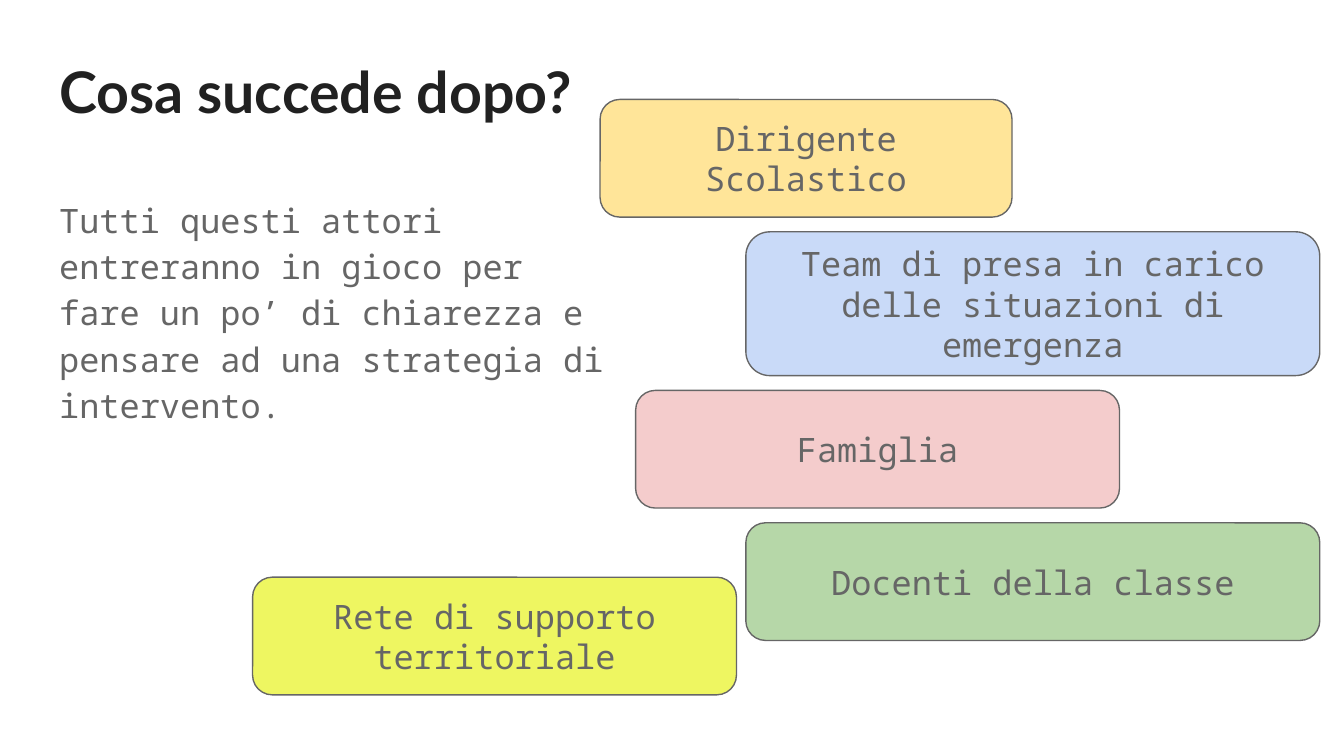
from lxml.etree import SubElement
from pptx import Presentation
from pptx.dml.color import RGBColor
from pptx.enum.shapes import MSO_SHAPE as Shape
from pptx.enum.text import MSO_ANCHOR as Anchor, MSO_AUTO_SIZE as AutoSize, PP_ALIGN as Align
from pptx.oxml.ns import qn
from pptx.util import Pt

PX = 4572  # EMU per px, 200 px to the inch

# Content
TITLE = "Cosa succede dopo?"
INTRO = ("Tutti questi attori entreranno in gioco per fare un po’ di chiarezza "
         "e pensare ad una strategia di intervento.")
ACTORS = [  # text, fill, (left, top, width, height)
    ("Team di presa in carico delle situazioni di emergenza", "C9DAF8", (1110, 345, 854, 214)),
    ("Famiglia", "F4CCCC", (946, 581, 720, 175)),
    ("Docenti della classe", "B6D7A8", (1110, 778, 854, 175)),
    ("Dirigente Scolastico", "FFE599", (893, 148, 613, 175)),
    ("Rete di supporto territoriale", "EEF661", (376, 859, 720, 175)),
]
INK, GREY = "212121", "666666"
HEADING_FONT, TEXT_FONT = "Lato", "Noto Sans Mono"


def color(value):
    return RGBColor.from_string(value)


def place(part, box):
    part.left, part.top, part.width, part.height = (n * PX for n in box)


def write(part, text, font_name, size, ink, align=Align.LEFT, anchor=Anchor.TOP, bold=False):
    frame = part.text_frame
    frame.text = text
    frame.word_wrap = True
    frame.auto_size = AutoSize.NONE
    frame.vertical_anchor = anchor
    frame.margin_left = frame.margin_right = frame.margin_top = frame.margin_bottom = 20 * PX
    paragraph = frame.paragraphs[0]
    paragraph.alignment = align
    font = paragraph.font
    font.name, font.size, font.bold = font_name, Pt(size), bold
    font.color.rgb = color(ink)
    return paragraph


deck = Presentation()
deck.slide_width, deck.slide_height = 2000 * PX, 1125 * PX
slide = deck.slides.add_slide(deck.slide_layouts[1])

# Title
title = slide.shapes.title
place(title, (68, 64, 1864, 176))
write(title, TITLE, HEADING_FONT, 30.7, INK, bold=True)

# Introduction, without the bullet of the template
intro = slide.placeholders[1]
place(intro, (68, 268, 854, 730))
paragraph = write(intro, INTRO, TEXT_FONT, 18, GREY)
paragraph.line_spacing = 1.15
paragraph.space_before, paragraph.space_after = Pt(0), Pt(12)
properties = paragraph._p.get_or_add_pPr()
properties.set("marL", "0")
properties.set("indent", "0")
bullet = SubElement(properties, qn("a:buNone"))
properties.find(qn("a:defRPr")).addprevious(bullet)

# Actors
for text, fill, box in ACTORS:
    card = slide.shapes.add_shape(Shape.ROUNDED_RECTANGLE, 0, 0, 0, 0)
    place(card, box)
    card.shadow.inherit = False
    card.fill.solid()
    card.fill.fore_color.rgb = color(fill)
    card.line.color.rgb = color(GREY)
    card.line.width = Pt(0.75)
    write(card, text, TEXT_FONT, 18, GREY, Align.CENTER, Anchor.MIDDLE)

deck.save("out.pptx")
